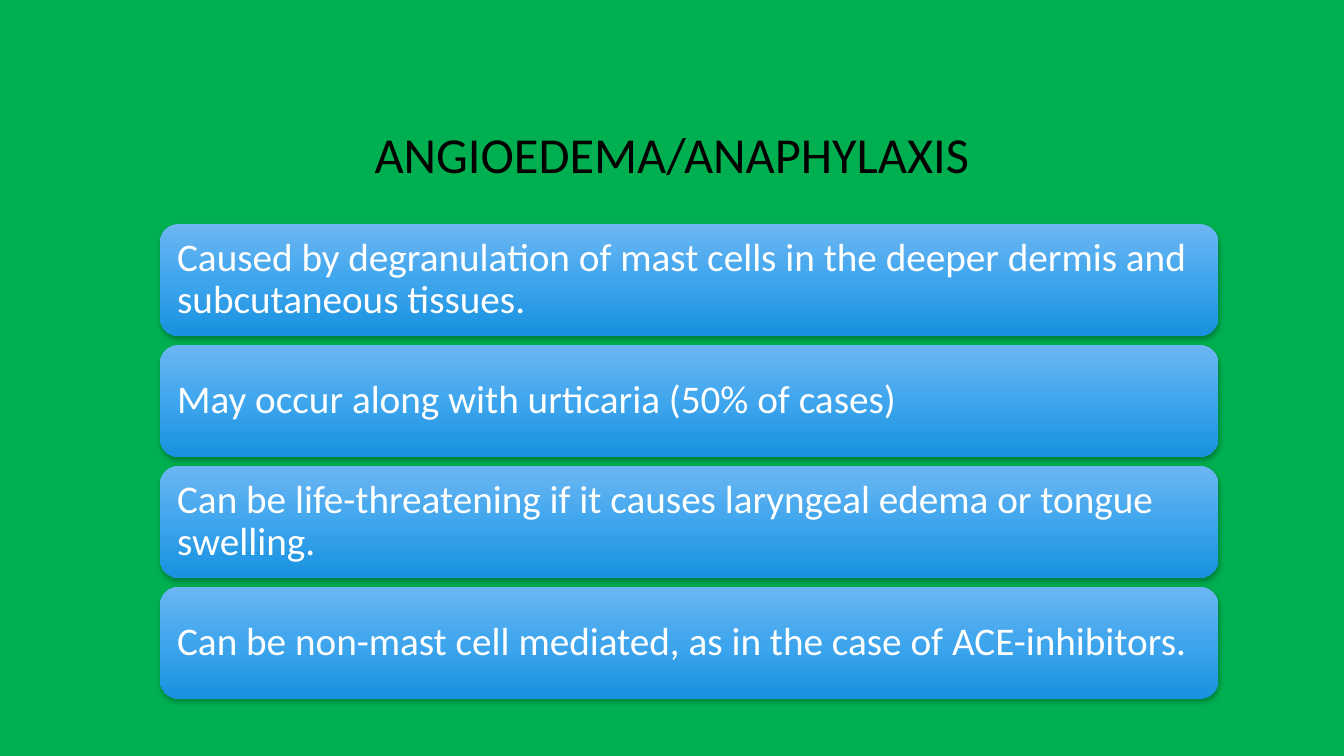
from copy import deepcopy

from lxml import etree
from pptx import Presentation
from pptx.dml.color import RGBColor
from pptx.enum.shapes import MSO_SHAPE
from pptx.enum.text import MSO_ANCHOR, PP_ALIGN
from pptx.oxml.ns import qn
from pptx.util import Pt

ROUNDED = MSO_SHAPE.ROUNDED_RECTANGLE
MIDDLE = MSO_ANCHOR.MIDDLE
LEFT, CENTER = PP_ALIGN.LEFT, PP_ALIGN.CENTER

FONT = "Calibri"
COLORS = {
    "background": "00B050",
    "title": "000000",
    "card_text": "FFFFFF",
    "card_top": "6CB6F1",
    "card_middle": "3FA6EE",
    "card_bottom": "1891DF",
    "shadow": "000000",
}
CARD_STOPS = [(0, "card_top"), (0.5, "card_middle"), (1, "card_bottom")]

TITLE = "ANGIOEDEMA/ANAPHYLAXIS"
FACTS = [
    "Caused by degranulation of mast cells in the deeper dermis and subcutaneous tissues.",
    "May occur along with urticaria (50% of cases)",
    "Can be life-threatening if it causes laryngeal edema or tongue swelling.",
    "Can be non-mast cell mediated, as in the case of ACE-inhibitors.",
]


def rgb(name):
    return RGBColor.from_string(COLORS[name])


def write(sp, text, size, color, align):
    tf = sp.text_frame
    tf.word_wrap = True
    tf.vertical_anchor = MIDDLE
    p = tf.paragraphs[0]
    p.text = text
    p.alignment = align
    p.line_spacing = 0.9
    p.font.name = FONT
    p.font.size = Pt(size)
    p.font.color.rgb = rgb(color)
    return tf


def fill_gradient(sp):
    sp.fill.gradient()
    sp.fill.gradient_angle = 270
    stop_list = sp._element.spPr.find(".//" + qn("a:gsLst"))
    stop_list.append(deepcopy(stop_list[0]))  # third stop
    for stop, (position, color) in zip(sp.fill.gradient_stops, CARD_STOPS):
        stop.position = position
        stop.color.rgb = rgb(color)


def add_soft_shadow(sp):
    sp.shadow.inherit = False
    effects = sp._element.spPr.find(qn("a:effectLst"))
    shadow = etree.SubElement(effects, qn("a:outerShdw"), blurRad=str(Pt(4)),
                              dist=str(Pt(2)), dir="5400000", rotWithShape="0")
    color = etree.SubElement(shadow, qn("a:srgbClr"), val=COLORS["shadow"])
    etree.SubElement(color, qn("a:alpha"), val="28000")


def add_title(slide, left, top, width, height):
    sp = slide.shapes.add_textbox(Pt(left), Pt(top), Pt(width), Pt(height))
    write(sp, TITLE, 36, "title", CENTER)


def add_card(slide, text, left, top, width, height):
    sp = slide.shapes.add_shape(ROUNDED, Pt(left), Pt(top), Pt(width), Pt(height))
    fill_gradient(sp)
    sp.line.fill.background()
    add_soft_shadow(sp)
    tf = write(sp, text, 28, "card_text", LEFT)
    tf.margin_left = tf.margin_right = tf.margin_top = tf.margin_bottom = Pt(8.4)


def add_fact_list(slide, left, top, width, height, gap=6.4):
    card_height = (height - gap * (len(FACTS) - 1)) / len(FACTS)
    for i, fact in enumerate(FACTS):
        add_card(slide, fact, left, top + i * (card_height + gap), width, card_height)


def main():
    prs = Presentation()
    prs.slide_width, prs.slide_height = Pt(960), Pt(540)
    slide = prs.slides.add_slide(prs.slide_layouts[6])
    slide.background.fill.solid()
    slide.background.fill.fore_color.rgb = rgb("background")

    add_title(slide, 72, 49, 816, 126)
    add_fact_list(slide, 114.3, 160, 756, 339)
    prs.save("out.pptx")


if __name__ == "__main__":
    main()
